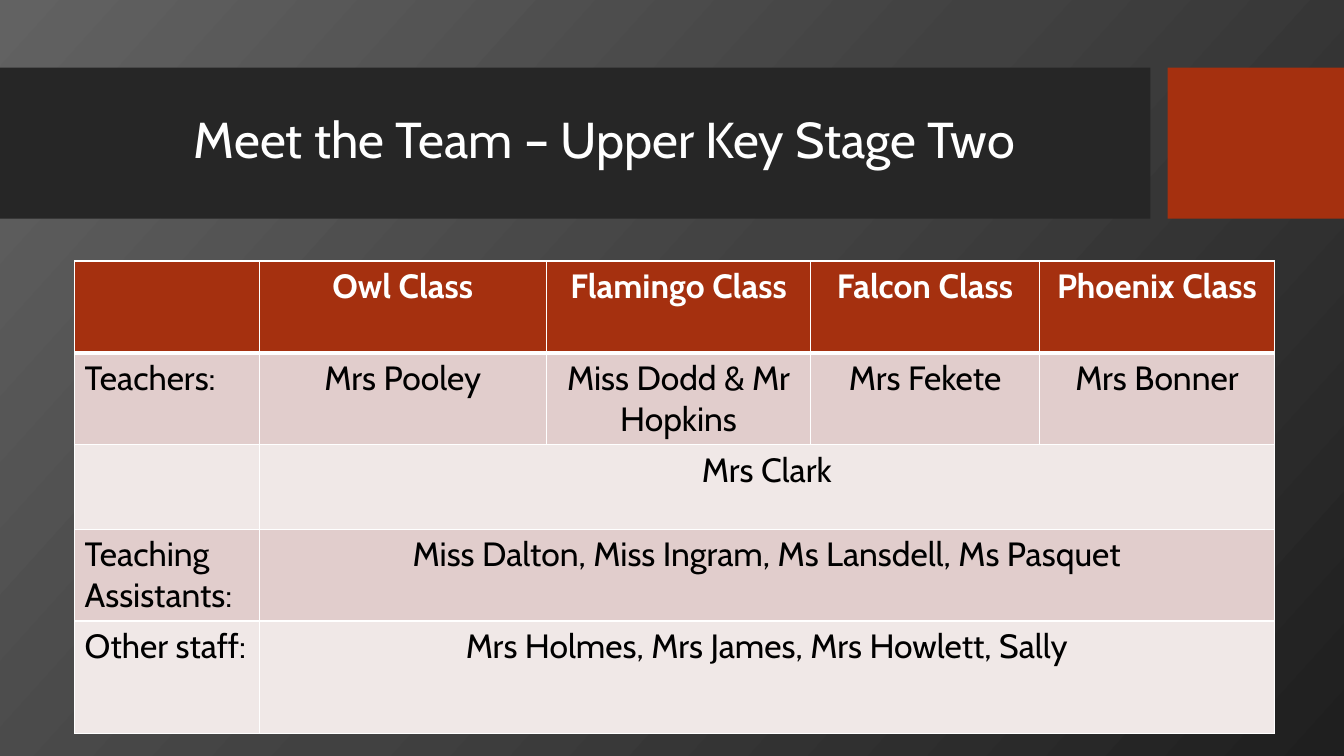
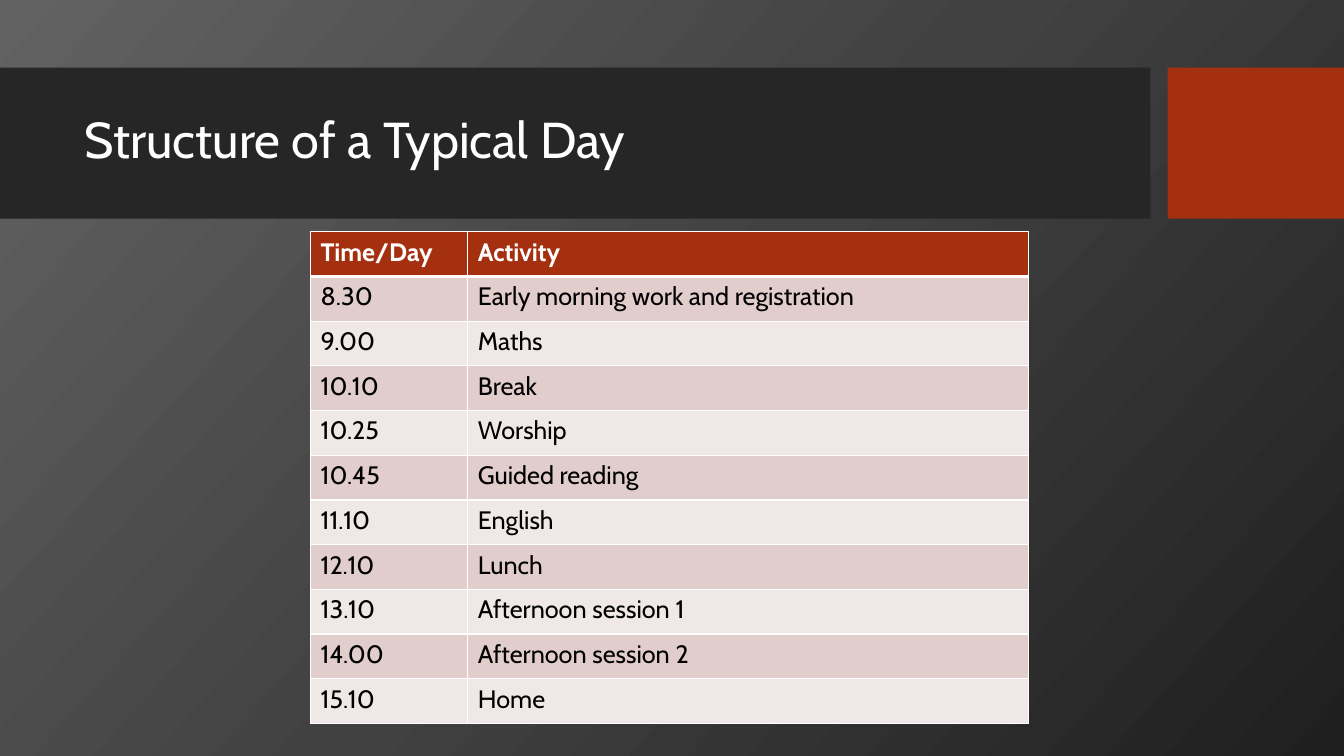
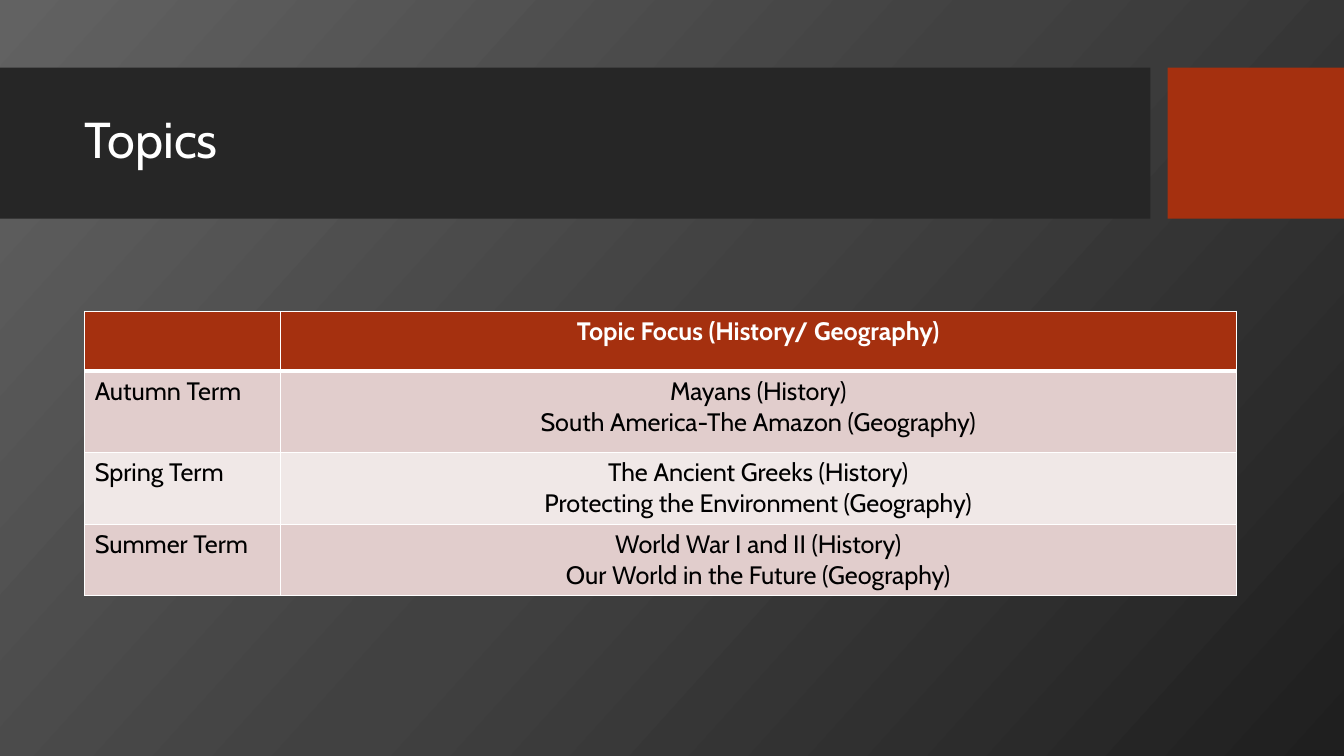
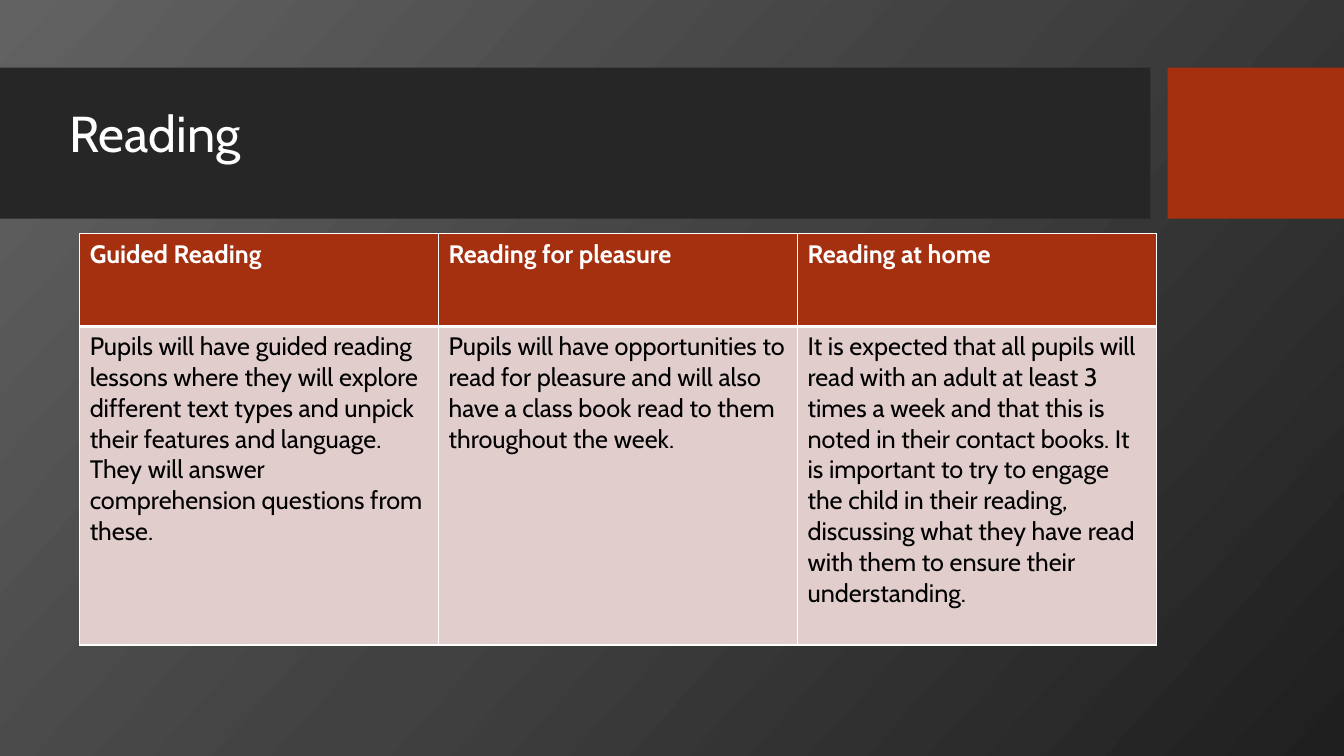
from copy import deepcopy
from dataclasses import dataclass

from lxml.etree import SubElement
from pptx import Presentation
from pptx.dml.color import RGBColor
from pptx.enum.shapes import MSO_SHAPE, PP_PLACEHOLDER
from pptx.enum.text import MSO_ANCHOR, MSO_AUTO_SIZE, PP_ALIGN
from pptx.oxml.ns import qn
from pptx.util import Inches, Pt

FONT = "Cabin"
WHITE = RGBColor(0xFF, 0xFF, 0xFF)
BLACK = RGBColor(0x00, 0x00, 0x00)
CHARCOAL = RGBColor(0x26, 0x26, 0x26)
RUST = RGBColor(0xA5, 0x30, 0x0F)
ROSE = RGBColor(0xE1, 0xCD, 0xCC)
PALE_ROSE = RGBColor(0xF0, 0xE8, 0xE7)
BACKGROUND = [
    (0, RGBColor(0x62, 0x62, 0x62)),
    (0.5, RGBColor(0x41, 0x41, 0x41)),
    (1, RGBColor(0x1F, 0x1F, 0x1F)),
]
TITLE_ONLY = 5
THIN, THICK = Pt(1), Pt(3)


@dataclass
class Band:
    left: float
    width: float
    color: RGBColor


@dataclass
class TableSlide:
    title: str
    left: float
    top: float
    cols: list[float]
    heights: list[float]
    rows: list[list[str]]  # the last cell of a short row spans the rest
    size: int = 18
    centred: bool = False  # centre every column but the first
    title_align: PP_ALIGN = PP_ALIGN.LEFT
    title_at: tuple[float, float] = (0.74, 0.82)


BANDS = [Band(0, 11.41, CHARCOAL), Band(11.58, 1.75, RUST)]

SLIDES = [
    TableSlide(
        "Meet the Team – Upper Key Stage Two", 0.74, 2.59,
        cols=[1.83, 2.85, 2.62, 2.27, 2.33],
        heights=[0.91, 0.91, 0.84, 0.9, 1.12],
        rows=[
            ["", "Owl Class", "Flamingo Class", "Falcon Class", "Phoenix Class"],
            ["Teachers:", "Mrs Pooley", "Miss Dodd & Mr Hopkins", "Mrs Fekete",
             "Mrs Bonner"],
            ["", "Mrs Clark"],
            ["Teaching Assistants:",
             "Miss Dalton, Miss Ingram, Ms Lansdell, Ms Pasquet"],
            ["Other staff:", "Mrs Holmes, Mrs James, Mrs Howlett, Sally"],
        ],
        size=24, centred=True, title_align=PP_ALIGN.CENTER,
    ),
    TableSlide(
        "Structure of a Typical Day", 3.08, 2.3,
        cols=[1.56, 5.56],
        heights=[4.88 / 11] * 11,
        rows=[
            ["Time/Day", "Activity"],
            ["8.30", "Early morning work and registration"],
            ["9.00", "Maths"],
            ["10.10", "Break"],
            ["10.25", "Worship"],
            ["10.45", "Guided reading"],
            ["11.10", "English"],
            ["12.10", "Lunch"],
            ["13.10", "Afternoon session 1"],
            ["14.00", "Afternoon session 2"],
            ["15.10", "Home"],
        ],
    ),
    TableSlide(
        "Topics", 0.84, 3.09,
        cols=[1.94, 9.48],
        heights=[0.59, 0.81, 0.71, 0.71],
        rows=[
            ["", "Topic Focus (History/ Geography)"],
            ["Autumn Term",
             "Mayans (History)\nSouth America-The Amazon (Geography)"],
            ["Spring Term",
             "The Ancient Greeks (History)\n"
             "Protecting the Environment (Geography)"],
            ["Summer Term",
             "World War I and II (History)\n"
             "Our World in the Future (Geography)"],
        ],
        centred=True,
    ),
    TableSlide(
        "Reading", 0.79, 2.32,
        cols=[3.56] * 3,
        heights=[0.92, 3.16],
        rows=[
            ["Guided Reading", "Reading for pleasure", "Reading at home"],
            ["Pupils will have guided reading lessons where they will explore "
             "different text types and unpick their features and language.\n"
             "They will answer comprehension questions from these.",
             "Pupils will have opportunities to read for pleasure and will also "
             "have a class book read to them throughout the week.",
             "It is expected that all pupils will read with an adult at least 3 "
             "times a week and that this is noted in their contact books. It is "
             "important to try to engage the child in their reading, discussing "
             "what they have read with them to ensure their understanding."],
        ],
        title_at=(0.59, 0.76),
    ),
]


def write(tf, text: str, *, size: int, color: RGBColor, bold: bool = False,
          align: PP_ALIGN = PP_ALIGN.LEFT, spacing: float = 1.0) -> None:
    """Fill a text frame, one paragraph a line."""
    for i, line in enumerate(text.split("\n")):
        p = tf.add_paragraph() if i else tf.paragraphs[0]
        p.alignment = align
        p.line_spacing = spacing
        r = p.add_run()
        r.text = line
        r.font.name = FONT
        r.font.size = Pt(size)
        r.font.bold = bold
        r.font.color.rgb = color


def set_background(master) -> None:
    fill = master.background.fill
    fill.gradient()
    fill.gradient_angle = 360 - 42
    # A new gradient has two stops; add the middle one
    stops = master.element.find(".//" + qn("a:gsLst"))
    stops.insert(1, deepcopy(stops[0]))
    for stop, (position, color) in zip(fill.gradient_stops, BACKGROUND):
        stop.position = position
        stop.color.rgb = color


def add_bands(slide, layout) -> None:
    """Draw the title bands and hand them over to the layout."""
    for ph in list(layout.placeholders):
        if ph.placeholder_format.type != PP_PLACEHOLDER.TITLE:
            ph.element.getparent().remove(ph.element)
    tree = layout.shapes.element
    shapes = [
        slide.shapes.add_shape(MSO_SHAPE.RECTANGLE, Inches(band.left), Inches(0.67),
                               Inches(band.width), Inches(1.5))
        for band in BANDS
    ]
    for i, (sp, band) in enumerate(zip(shapes, BANDS)):
        sp.shadow.inherit = False
        sp.fill.solid()
        sp.fill.fore_color.rgb = band.color
        sp.line.fill.background()
        tree.insert(2 + i, sp.element)


def set_borders(cell, top: int, bottom: int) -> None:
    tc_pr = cell._tc.get_or_add_tcPr()
    widths = {"a:lnL": THIN, "a:lnR": THIN, "a:lnT": top, "a:lnB": bottom}
    for tag, width in widths.items():
        ln = SubElement(tc_pr, qn(tag), w=str(int(width)))
        fill = SubElement(ln, qn("a:solidFill"))
        SubElement(fill, qn("a:srgbClr"), val=str(WHITE))


def add_title(slide, content: TableSlide) -> None:
    title = slide.shapes.title
    title.left, title.top = (Inches(v) for v in content.title_at)
    title.width, title.height = Inches(10.51), Inches(1.18)
    tf = title.text_frame
    tf.word_wrap = True
    tf.auto_size = MSO_AUTO_SIZE.NONE
    tf.vertical_anchor = MSO_ANCHOR.MIDDLE
    write(tf, content.title, size=36, color=WHITE, align=content.title_align,
          spacing=0.9)


def add_table(slide, content: TableSlide) -> None:
    n_cols = len(content.cols)
    table = slide.shapes.add_table(
        len(content.rows), n_cols, Inches(content.left), Inches(content.top),
        Inches(sum(content.cols)), Inches(sum(content.heights))).table
    for column, width in zip(table.columns, content.cols):
        column.width = Inches(width)

    for r, (texts, height) in enumerate(zip(content.rows, content.heights)):
        table.rows[r].height = Inches(height)
        header = r == 0
        for c in range(n_cols):
            cell = table.cell(r, c)
            set_borders(cell, top=THICK if r == 1 else THIN,
                        bottom=THICK if header else THIN)
            cell.fill.solid()
            cell.fill.fore_color.rgb = RUST if header else ROSE if r % 2 else PALE_ROSE
        for c, text in enumerate(texts):
            if text:
                centre = content.centred and c > 0
                write(table.cell(r, c).text_frame, text, size=content.size,
                      color=WHITE if header else BLACK, bold=header,
                      align=PP_ALIGN.CENTER if centre else PP_ALIGN.LEFT)
        if len(texts) < n_cols:
            table.cell(r, len(texts) - 1).merge(table.cell(r, n_cols - 1))


def main() -> None:
    prs = Presentation()
    prs.slide_width, prs.slide_height = Inches(13.33), Inches(7.5)
    layout = prs.slide_layouts[TITLE_ONLY]
    set_background(prs.slide_master)
    for i, content in enumerate(SLIDES):
        slide = prs.slides.add_slide(layout)
        if i == 0:
            add_bands(slide, layout)
        add_title(slide, content)
        add_table(slide, content)
    prs.save("out.pptx")


if __name__ == "__main__":
    main()
